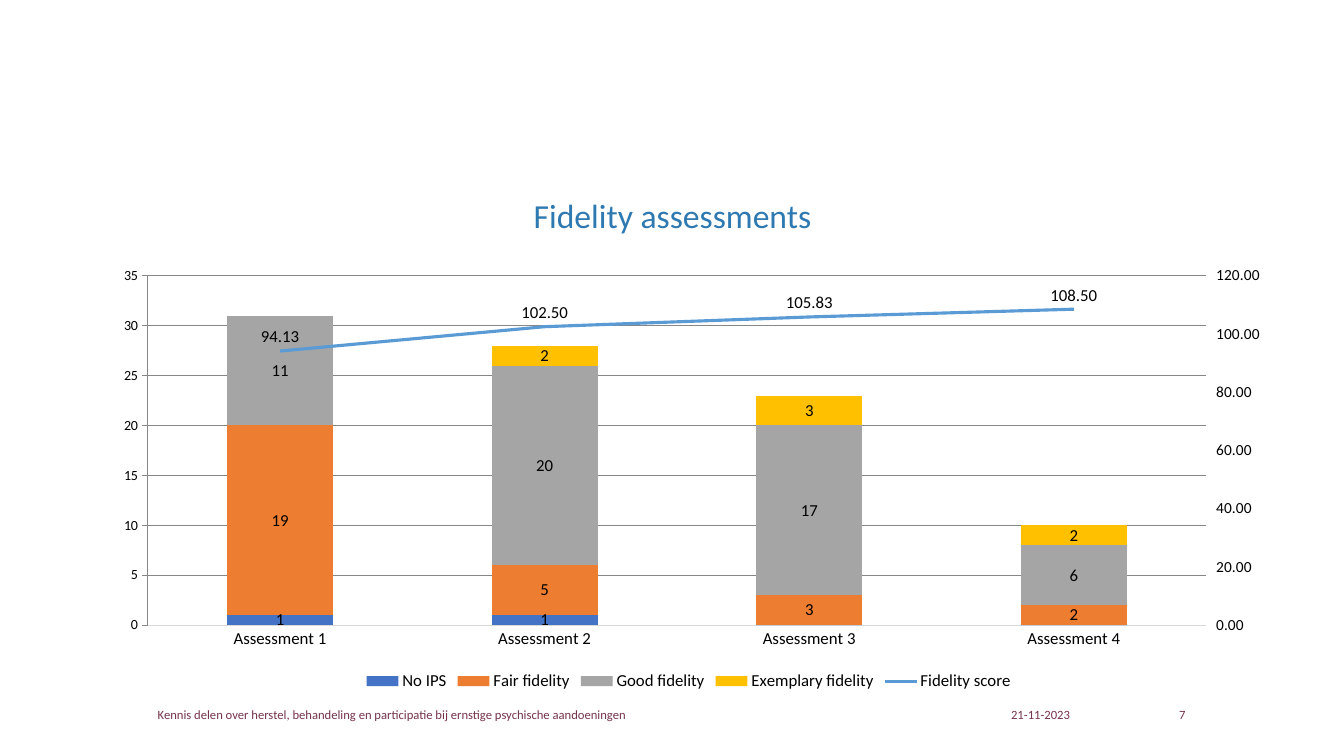
import pptx
import pptx.util
import pptx.oxml
import pptx.oxml.ns
import pptx.dml.color
import pptx.chart.axis
import pptx.chart.data
import pptx.enum.chart
import pptx.enum.text
from dataclasses import dataclass

PX = 9525  # EMU in one px, 96 px to the inch
NS = pptx.oxml.ns.nsdecls("c")
qn = pptx.oxml.ns.qn
Kind = pptx.enum.chart
Align = pptx.enum.text.PP_ALIGN
Middle = pptx.enum.text.MSO_ANCHOR.MIDDLE


@dataclass(frozen=True)
class Theme:
    face: str = "Calibri"
    title: str = "2E79B1"
    foot: str = "753349"
    ink: str = "000000"
    rule: str = "D9D9D9"
    score: str = "5B9BD5"
    bars: tuple = ("4472C4", "ED7D31", "A5A5A5", "FFC000")
    head_pt: int = 24
    text_pt: int = 12
    axis_pt: int = 11
    foot_pt: int = 9


LOOK = Theme()

CATS = [f"Assessment {n}" for n in range(1, 5)]
LEVELS = {
    "No IPS": (1, 1, 0, 0),
    "Fair fidelity": (19, 5, 3, 2),
    "Good fidelity": (11, 20, 17, 6),
    "Exemplary fidelity": (0, 2, 3, 2),
}
SCORES = (94.13, 102.5, 105.83, 108.5)

LAYOUT = f"""<c:layout {NS}><c:manualLayout>
<c:layoutTarget val="inner"/><c:xMode val="edge"/><c:yMode val="edge"/>
<c:x val="0.04"/><c:y val="0.04"/><c:w val="0.9"/><c:h val="0.8"/>
</c:manualLayout></c:layout>"""
LINE = f"""<c:lineChart {NS}><c:grouping val="standard"/><c:varyColors val="0"/>
<c:marker val="1"/><c:axId val="501"/><c:axId val="502"/></c:lineChart>"""
RIGHT = f"""<c:valAx {NS}><c:axId val="502"/>
<c:scaling><c:orientation val="minMax"/></c:scaling>
<c:delete val="0"/><c:axPos val="r"/><c:majorTickMark val="out"/>
<c:minorTickMark val="none"/><c:tickLblPos val="nextTo"/>
<c:crossAx val="501"/><c:crosses val="max"/></c:valAx>"""
HIDDEN = f"""<c:catAx {NS}><c:axId val="501"/>
<c:scaling><c:orientation val="minMax"/></c:scaling>
<c:delete val="1"/><c:axPos val="b"/><c:majorTickMark val="none"/>
<c:minorTickMark val="none"/><c:tickLblPos val="nextTo"/>
<c:crossAx val="502"/><c:crosses val="autoZero"/></c:catAx>"""


def make(xml):
    return pptx.oxml.parse_xml(xml)


def rgb(code):
    return pptx.dml.color.RGBColor.from_string(code)


def style(font, size, color):
    font.name = LOOK.face
    font.size = pptx.util.Pt(size)
    font.color.rgb = rgb(color)


def emu(box):
    return [n * PX for n in box]


def write(frame, text, size, color, align):
    frame.word_wrap = True
    frame.vertical_anchor = Middle
    para = frame.paragraphs[0]
    para.alignment = align
    run = para.add_run()
    run.text = text
    style(run.font, size, color)
    return para


def head(slide, box):
    title = slide.shapes.title
    title.left, title.top, title.width, title.height = emu(box)
    para = write(title.text_frame, "Fidelity assessments",
                 LOOK.head_pt, LOOK.title, Align.CENTER)
    para.line_spacing = 0.9


def foot(slide, box):
    left, top, width, height = box
    parts = (
        (836, 76, Align.LEFT, "21-11-2023"),
        (width - 53, 53, Align.RIGHT, "7"),
        (0, 492, Align.CENTER, "Kennis delen over herstel, behandeling en "
         "participatie bij ernstige psychische aandoeningen"),
    )
    for shift, wide, align, text in parts:
        note = slide.shapes.add_textbox(*emu((left + shift, top, wide, height)))
        frame = note.text_frame
        frame.margin_left = frame.margin_right = 0
        frame.margin_top = frame.margin_bottom = 0
        write(frame, text, LOOK.foot_pt, LOOK.foot, align)


def label(series, place, form):
    tags = series.data_labels
    tags.show_value = True
    tags.position = place
    tags.number_format = form
    tags.number_format_is_linked = False
    style(tags.font, LOOK.text_pt, LOOK.ink)


def scale(axis, top, form, tick):
    axis.minimum_scale, axis.maximum_scale = 0, top
    axis.has_major_gridlines = False
    axis.major_tick_mark = tick
    axis.tick_labels.number_format = form
    axis.tick_labels.number_format_is_linked = False
    axis.format.line.fill.background()
    style(axis.tick_labels.font, LOOK.axis_pt, LOOK.ink)


def split(chart):
    """Move the last series to a line plot with its own right axis."""
    bars = chart.plots[0]._element
    area = bars.getparent()
    score = bars.findall(qn("c:ser"))[-1]
    for flag in score.findall(qn("c:invertIfNegative")):
        score.remove(flag)
    line, right = make(LINE), make(RIGHT)
    bars.addnext(line)
    line.insert(2, score)
    last = area.findall(qn("c:valAx"))[-1]
    last.addnext(right)
    right.addnext(make(HIDDEN))
    for old in area.findall(qn("c:layout")):
        area.remove(old)
    area.insert(0, make(LAYOUT))
    return pptx.chart.axis.ValueAxis(right)


def graph(slide, box):
    data = pptx.chart.data.CategoryChartData()
    data.categories = CATS
    for name, vals in LEVELS.items():
        data.add_series(name, vals, "###0")
    data.add_series("Fidelity score", SCORES, "###0.00")
    chart = slide.shapes.add_chart(
        Kind.XL_CHART_TYPE.COLUMN_STACKED, *emu(box), data).chart
    chart.has_title = False
    style(chart.font, 10, LOOK.ink)
    right = split(chart)

    # Stacked columns, with no label on an empty part
    bars, line = chart.plots
    bars.gap_width, bars.overlap = 150, 100
    bars.vary_by_categories = False
    for series, color in zip(bars.series, LOOK.bars):
        series.format.fill.solid()
        series.format.fill.fore_color.rgb = rgb(color)
        label(series, Kind.XL_LABEL_POSITION.CENTER, "###0")
        tags = series._element.find(qn("c:dLbls"))
        gaps = [i for i, val in enumerate(series.values) if val == 0]
        for spot, i in enumerate(gaps):
            tags.insert(spot, make(f'<c:dLbl {NS}><c:idx val="{i}"/>'
                                   '<c:delete val="1"/></c:dLbl>'))

    # Score line
    score = line.series[0]
    score.smooth = False
    score.marker.style = Kind.XL_MARKER_STYLE.NONE
    score.format.line.color.rgb = rgb(LOOK.score)
    score.format.line.width = pptx.util.Pt(2.25)
    label(score, Kind.XL_LABEL_POSITION.ABOVE, "###0.00")

    # Axes
    tick = Kind.XL_TICK_MARK
    scale(chart.value_axis, 40, "###0", tick.NONE)
    scale(right, 120, "###0.00", tick.OUTSIDE)
    base = chart.category_axis
    base.major_tick_mark = tick.NONE
    base.format.line.color.rgb = rgb(LOOK.rule)
    base.format.line.width = pptx.util.Pt(0.75)
    style(base.tick_labels.font, LOOK.text_pt, LOOK.ink)

    # Legend
    chart.has_legend = True
    chart.legend.position = Kind.XL_LEGEND_POSITION.BOTTOM
    chart.legend.include_in_layout = False
    style(chart.legend.font, LOOK.text_pt, LOOK.ink)


def main():
    deck = pptx.Presentation()
    deck.slide_width, deck.slide_height = emu((1280, 720))
    slide = deck.slides.add_slide(deck.slide_layouts[5])
    head(slide, (152, 151, 977, 113))
    foot(slide, (127, 661, 1002, 38))
    graph(slide, (96, 246, 1120, 416))
    deck.save("out.pptx")


if __name__ == "__main__":
    main()
